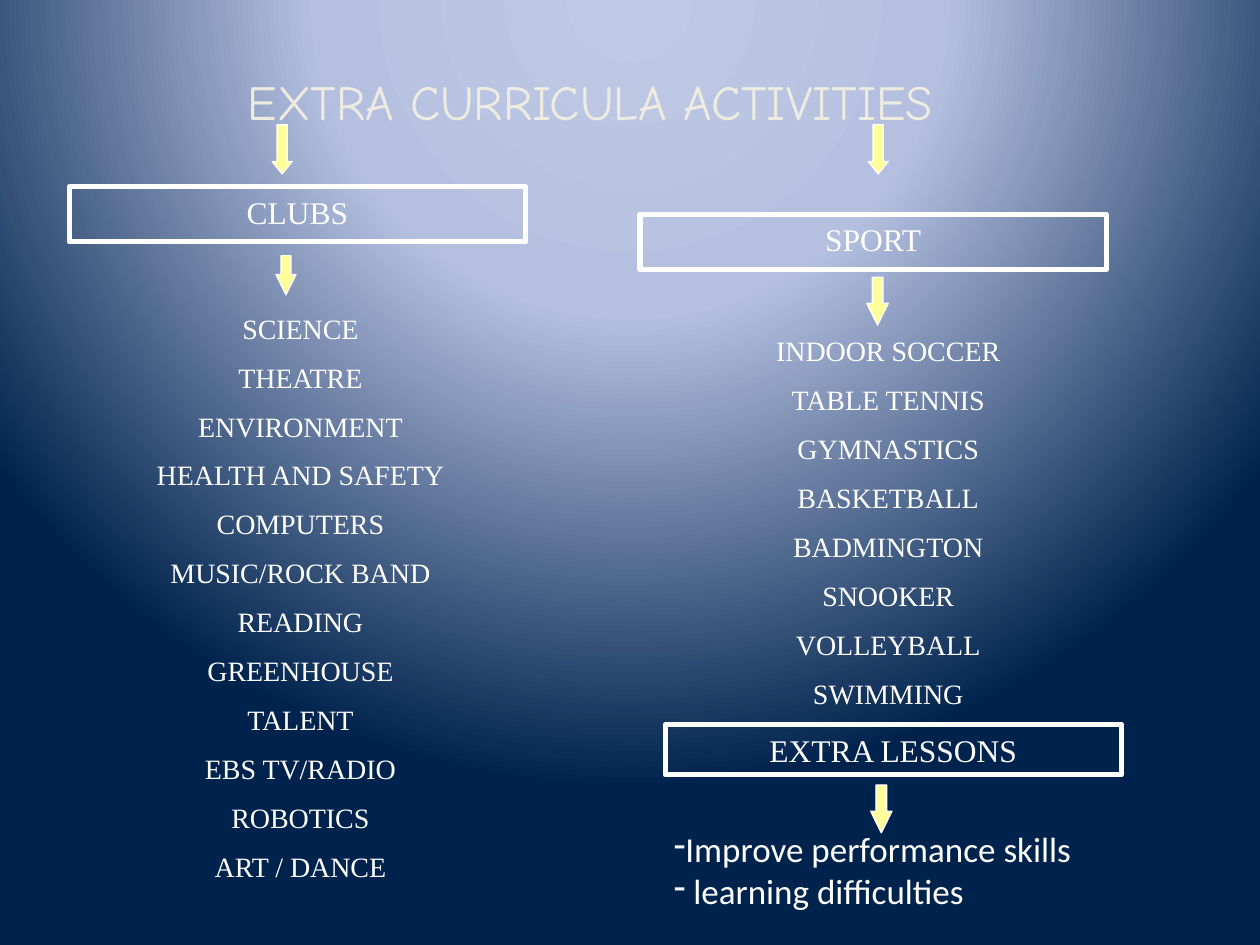
"""Build the extra curricula activities slide."""
from lxml import etree
from pptx import Presentation
from pptx import util as u
from pptx.dml.color import RGBColor
from pptx.enum import shapes, text
from pptx.oxml import parse_xml
from pptx.oxml.ns import nsdecls, qn

WHITE = RGBColor(0xFF, 0xFF, 0xFF)
CREAM = RGBColor(0xEE, 0xEC, 0xE1)
YELLOW = RGBColor(0xFF, 0xFF, 0x99)
GRADIENT = [
    (0, RGBColor(0xBF, 0xC9, 0xE5)),
    (40, RGBColor(0xB5, 0xC0, 0xE0)),
    (100, RGBColor(0x00, 0x23, 0x4D)),
]
SERIF = "Times New Roman"

TITLE = ("EXTRA CURRICULA ACTIVITIES", (0.67, 0.52, 8.03, 0.57))
HEADINGS = [
    ("CLUBS", (0.55, 1.48, 3.62, 0.44)),
    ("SPORT", (5.08, 1.7, 3.7, 0.44)),
    ("EXTRA LESSONS", (5.28, 5.75, 3.62, 0.4)),
]
LISTS = [
    (["SCIENCE", "THEATRE", "ENVIRONMENT", "HEALTH AND SAFETY", "COMPUTERS",
      "MUSIC/ROCK BAND", "READING", "GREENHOUSE", "TALENT", "EBS TV/RADIO",
      "ROBOTICS", "ART / DANCE"], (0.47, 2.42, 3.83, 4.81)),
    (["INDOOR SOCCER", "TABLE TENNIS", "GYMNASTICS", "BASKETBALL",
      "BADMINGTON", "SNOOKER", "VOLLEYBALL", "SWIMMING"], (5.2, 2.6, 3.7, 3.2)),
]
LESSONS = (["Improve performance skills", " learning difficulties"],
           (5.25, 6.52, 3.94, 0.77))
TITLE_HEAD, LIST_HEAD = 0.62, 1.01
ARROWS = [
    ((2.16, 0.99, 0.16, 0.39), TITLE_HEAD),
    ((6.89, 0.99, 0.16, 0.39), TITLE_HEAD),
    ((2.19, 2.03, 0.16, 0.31), LIST_HEAD),
    ((6.88, 2.2, 0.17, 0.38), LIST_HEAD),
    ((6.91, 6.23, 0.17, 0.38), LIST_HEAD),
]


def inches(box):
    return [u.Inches(length) for length in box]


def paint_background(slide):
    stops = "".join(
        f'<a:gs pos="{position * 1000}"><a:srgbClr val="{color}"/></a:gs>'
        for position, color in GRADIENT)
    slide.background.fill.solid()
    properties = slide.background.fill._xPr
    properties.replace(properties[0], parse_xml(
        f'<a:gradFill {nsdecls("a")} rotWithShape="1"><a:gsLst>{stops}</a:gsLst>'
        '<a:path path="circle"><a:fillToRect l="50000" t="-80000" r="50000" '
        'b="180000"/></a:path></a:gradFill>'))


def write(shape, lines, size, font, color=WHITE, gap=0, bullet=None):
    frame = shape.text_frame
    frame.text = "\n".join(lines)
    frame.word_wrap = True
    frame.auto_size = text.MSO_AUTO_SIZE.NONE
    frame.vertical_anchor = text.MSO_ANCHOR.TOP
    for index, paragraph in enumerate(frame.paragraphs):
        paragraph.alignment = text.PP_ALIGN.LEFT if bullet else text.PP_ALIGN.CENTER
        paragraph.space_before = u.Pt(gap if index else 0)
        run_font = paragraph.runs[0].font
        run_font.size, run_font.name = u.Pt(size), font
        run_font.color.rgb = color
        if bullet:
            properties = paragraph._p.get_or_add_pPr()
            etree.SubElement(properties, qn("a:buChar"), char=bullet)


def add_outlined(slide, kind, box, line_width):
    shape = slide.shapes.add_shape(kind, *inches(box))
    shape.shadow.inherit = False
    shape.fill.background()
    shape.line.color.rgb = WHITE
    shape.line.width = u.Pt(line_width)
    return shape


def main():
    presentation = Presentation()
    presentation.slide_width, presentation.slide_height = inches((10, 7.5))
    slide = presentation.slides.add_slide(presentation.slide_layouts[5])
    paint_background(slide)

    title, box = TITLE
    placeholder = slide.shapes.title
    placeholder.left, placeholder.top, placeholder.width, placeholder.height = inches(box)
    write(placeholder, [title], 28, "Comic Neue", CREAM)

    for heading, box in HEADINGS:
        shape = add_outlined(slide, shapes.MSO_SHAPE.RECTANGLE, box, 3)
        write(shape, [heading], 18, SERIF)
    for activities, box in LISTS:
        write(slide.shapes.add_textbox(*inches(box)), activities, 16, SERIF, gap=8.8)
    for box, head in ARROWS:
        arrow = add_outlined(slide, shapes.MSO_SHAPE.DOWN_ARROW, box, 0.75)
        arrow.fill.solid()
        arrow.fill.fore_color.rgb = YELLOW
        arrow.adjustments[1] = head
    lessons, box = LESSONS
    write(slide.shapes.add_textbox(*inches(box)), lessons, 20, "Calibri", bullet="-")

    presentation.save("out.pptx")


if __name__ == "__main__":
    main()
